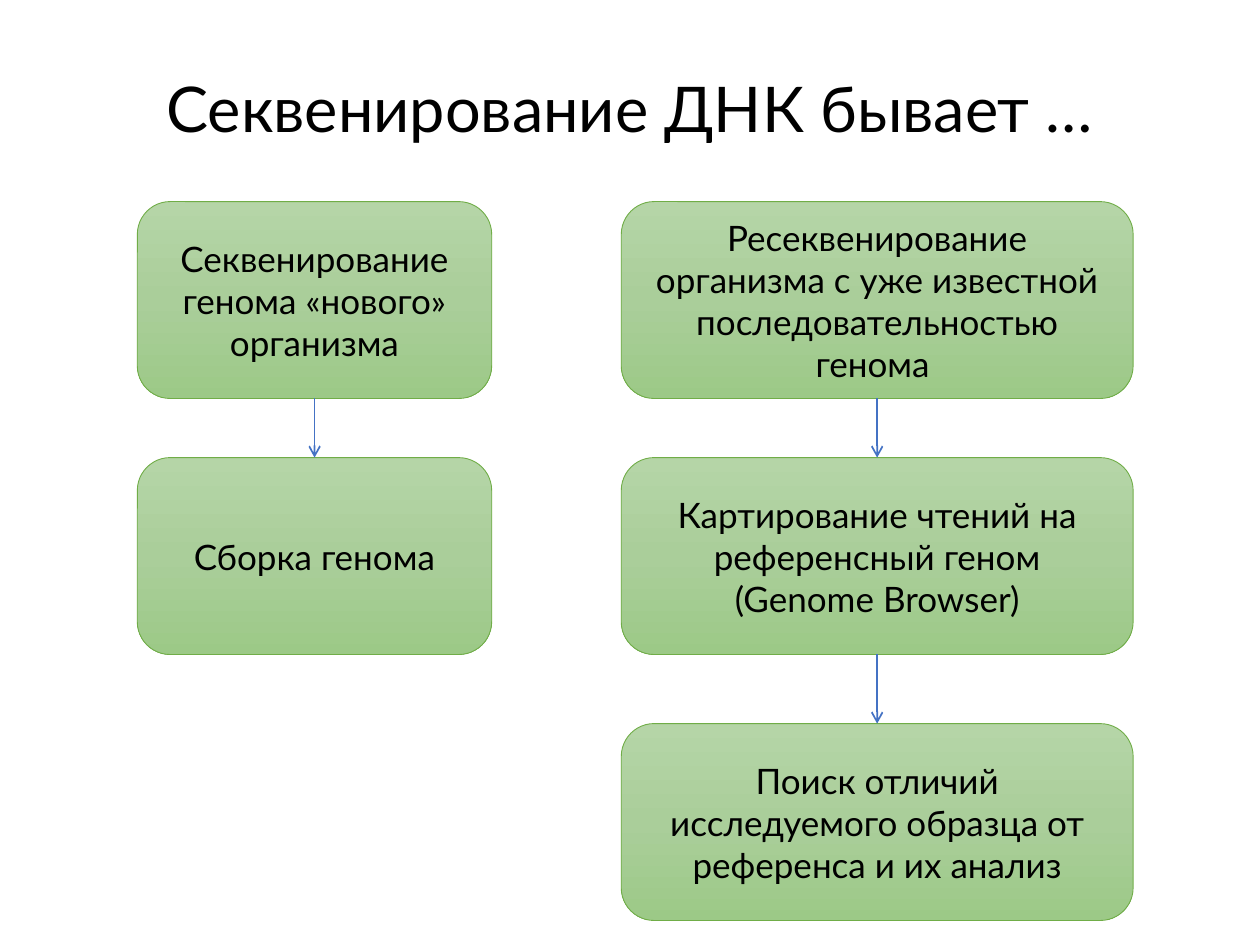
from copy import deepcopy

from lxml.etree import SubElement
from pptx import Presentation
from pptx.dml.color import RGBColor
from pptx.enum.shapes import MSO_CONNECTOR as Connector, MSO_SHAPE as Shape
from pptx.enum.text import MSO_ANCHOR as Anchor, PP_ALIGN as Align
from pptx.oxml.ns import qn
from pptx.util import Pt

BLACK = RGBColor(0x00, 0x00, 0x00)
GREEN = RGBColor(0x70, 0xAD, 0x47)
BLUE = RGBColor(0x44, 0x72, 0xC4)
GREENS = [
    (0, RGBColor(0xB5, 0xD5, 0xA7)),
    (0.5, RGBColor(0xAA, 0xCE, 0x9A)),
    (1, RGBColor(0x9C, 0xC9, 0x87)),
]
FONT = "Lato"

HEADING = "Секвенирование ДНК бывает …"
BRANCHES = [
    {
        "left": 78.5,
        "width": 202.5,
        "steps": [
            ["Секвенирование генома «нового» организма"],
            ["Сборка генома"],
        ],
    },
    {
        "left": 355,
        "width": 292.5,
        "steps": [
            ["Ресеквенирование организма с уже известной последовательностью генома "],
            ["Картирование чтений на референсный геном", "(Genome Browser)"],
            ["Поиск отличий исследуемого образца от референса и их анализ"],
        ],
    },
]
ROW_TOPS = [115.2, 261.5, 413.5]
STEP_HEIGHT = 112.5


def write(frame, paragraphs, size, anchor=Anchor.MIDDLE):
    frame.word_wrap = True
    frame.vertical_anchor = anchor
    for index, text in enumerate(paragraphs):
        paragraph = frame.add_paragraph() if index else frame.paragraphs[0]
        paragraph.alignment = Align.CENTER
        run = paragraph.add_run()
        run.text = text
        run.font.name = FONT
        run.font.size = Pt(size)
        run.font.color.rgb = BLACK


def shade(fill):
    fill.gradient()
    fill.gradient_angle = 270
    first = fill._fill._gradFill.find(qn("a:gsLst"))[0]
    first.addnext(deepcopy(first))
    for stop, (position, color) in zip(fill.gradient_stops, GREENS):
        stop.position = position
        stop.color.rgb = color


def add_step(slide, paragraphs, left, top, width):
    step = slide.shapes.add_shape(
        Shape.ROUNDED_RECTANGLE, Pt(left), Pt(top), Pt(width), Pt(STEP_HEIGHT)
    )
    step.shadow.inherit = False
    shade(step.fill)
    step.line.color.rgb = GREEN
    step.line.width = Pt(0.5)
    write(step.text_frame, paragraphs, size=20)
    return step


def add_arrow(slide, upper, lower):
    arrow = slide.shapes.add_connector(Connector.STRAIGHT, 0, 0, 0, 0)
    arrow.begin_connect(upper, 2)
    arrow.end_connect(lower, 0)
    arrow.line.color.rgb = BLUE
    arrow.line.width = Pt(1)
    SubElement(arrow.line._get_or_add_ln(), qn("a:tailEnd"), type="arrow")
    SubElement(arrow._element.spPr, qn("a:effectLst"))


def main():
    deck = Presentation()
    deck.slide_width, deck.slide_height = Pt(720), Pt(540)
    slide = deck.slides.add_slide(deck.slide_layouts[5])

    heading = slide.shapes.title
    heading.left, heading.top = Pt(0), Pt(36)
    heading.width, heading.height = Pt(720), Pt(51)
    write(heading.text_frame, [HEADING], size=36, anchor=Anchor.TOP)

    for branch in BRANCHES:
        steps = [
            add_step(slide, paragraphs, branch["left"], top, branch["width"])
            for paragraphs, top in zip(branch["steps"], ROW_TOPS)
        ]
        for upper, lower in zip(steps, steps[1:]):
            add_arrow(slide, upper, lower)

    deck.save("out.pptx")


if __name__ == "__main__":
    main()
